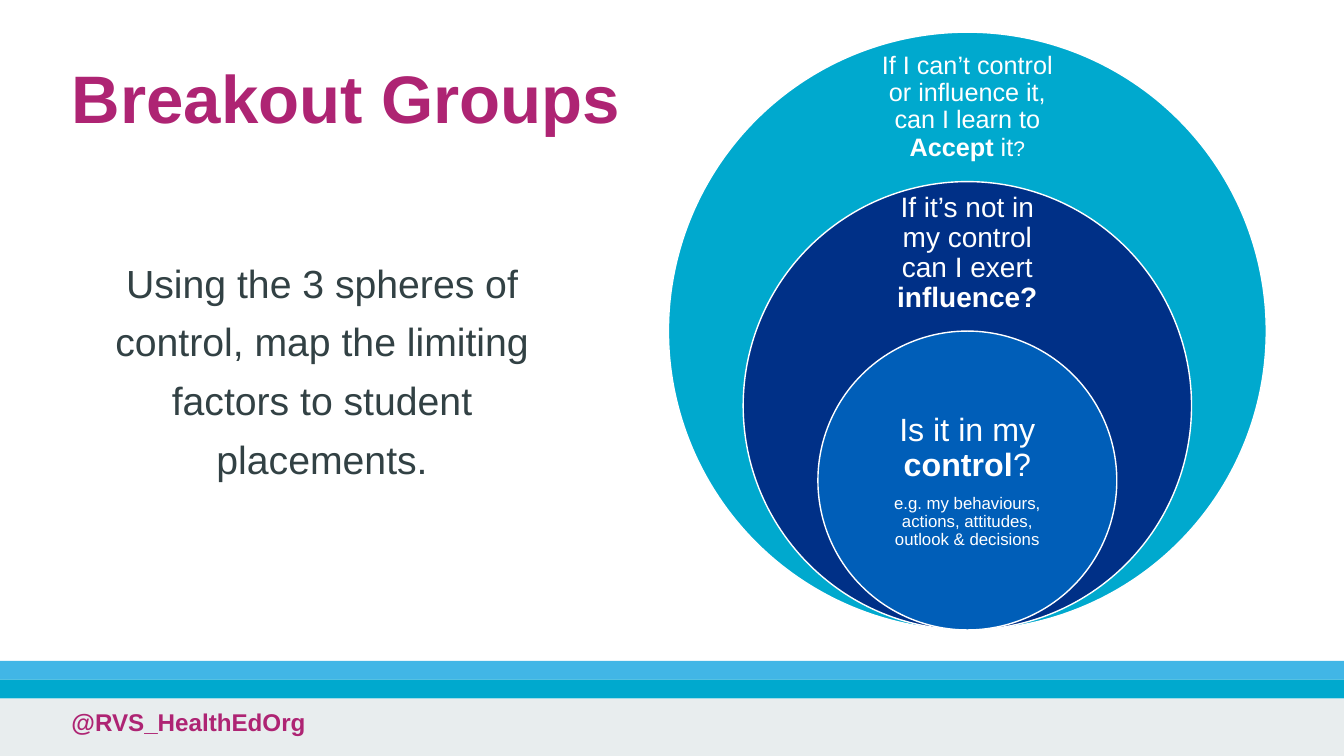
"""Build the Breakout Groups slide with three nested spheres of control."""
from pptx import Presentation
from pptx.dml.color import RGBColor
from pptx.enum.shapes import MSO_SHAPE as Shape
from pptx.enum.text import MSO_ANCHOR as Anchor, MSO_AUTO_SIZE as AutoSize, PP_ALIGN as Align
from pptx.oxml.ns import qn
from pptx.util import Pt
from lxml.etree import SubElement

WIDTH, HEIGHT = 960, 540
COLORS = {"magenta": "AE2473", "slate": "324144", "white": "FFFFFF", "mist": "E8EDEE",
          "sky": "41B6E6", "aqua": "00A9CE", "navy": "003087", "blue": "005EB8"}
TITLE = "Breakout Groups"
TASK = "Using the 3 spheres of control, map the limiting factors to student placements."
HANDLE = "@RVS_HealthEdOrg"
BANDS = [("mist", 499, 41), ("sky", 472, 13.5), ("aqua", 485.5, 13.5)]

SPHERE_CENTER, SPHERE_BOTTOM, SPHERE_SIZE = 691, 450, 427
LABEL_WIDTH, LABEL_HEIGHT = 150, 110
SPHERES = [
    {"color": "aqua", "scale": 1, "middle": 76.5, "inset": 10, "paragraphs": [
        (18, [("If I can’t control or influence it, can I learn to ", False, None),
              ("Accept", True, None), (" it", False, None), ("?", False, 15)])]},
    {"color": "navy", "scale": 0.75, "middle": 181, "inset": 11.5, "paragraphs": [
        (20, [("If it’s not in my control can I exert ", False, None),
              ("influence?", True, None)])]},
    {"color": "blue", "scale": 0.5, "middle": 344, "inset": 13, "paragraphs": [
        (23, [("Is it in my ", False, None), ("control", True, None), ("?", False, None)]),
        (12, [("e.g. my behaviours, actions, attitudes, outlook & decisions", False, None)])]},
]


def rgb(name):
    """Return the named colour."""
    return RGBColor.from_string(COLORS[name])


def place(shape, left, top, width, height):
    """Move and size a placeholder."""
    shape.left, shape.top, shape.width, shape.height = map(Pt, (left, top, width, height))


def style(para, size, color, bold=None, align=Align.LEFT, spacing=1.0):
    """Format a whole paragraph."""
    font = para.font
    font.name, font.size, font.bold = "Arial", Pt(size), bold
    font.color.rgb = rgb(color)
    para.alignment, para.line_spacing = align, spacing
    para.space_before = Pt(0)


def add_filled(slide, kind, color, left, top, width, height, outlined=False):
    """Add a flat coloured shape."""
    shape = slide.shapes.add_shape(kind, Pt(left), Pt(top), Pt(width), Pt(height))
    shape.shadow.inherit = False
    shape.fill.solid()
    shape.fill.fore_color.rgb = rgb(color)
    if outlined:
        shape.line.color.rgb = rgb("white")
        shape.line.width = Pt(1)
    else:
        shape.line.fill.background()


def add_label(slide, sphere):
    """Add the centred text of one sphere."""
    box = slide.shapes.add_textbox(
        Pt(SPHERE_CENTER - LABEL_WIDTH / 2), Pt(sphere["middle"] - LABEL_HEIGHT / 2),
        Pt(LABEL_WIDTH), Pt(LABEL_HEIGHT))
    frame = box.text_frame
    frame.word_wrap = True
    frame.vertical_anchor = Anchor.MIDDLE
    frame.margin_left = frame.margin_right = Pt(sphere["inset"])
    frame.margin_top = frame.margin_bottom = Pt(0)
    for index, (size, runs) in enumerate(sphere["paragraphs"]):
        para = frame.add_paragraph() if index else frame.paragraphs[0]
        style(para, size, "white", align=Align.CENTER, spacing=0.9)
        para.space_after = Pt(size * 0.35)
        for text, bold, own_size in runs:
            span = para.add_run()
            span.text = text
            span.font.bold = bold
            if own_size:
                span.font.size = Pt(own_size)


def main():
    """Assemble and save the deck."""
    deck = Presentation()
    deck.slide_width, deck.slide_height = Pt(WIDTH), Pt(HEIGHT)
    slide = deck.slides.add_slide(deck.slide_layouts[1])

    for color, top, height in BANDS:
        add_filled(slide, Shape.RECTANGLE, color, 0, top, WIDTH, height)
    handle = slide.shapes.add_textbox(Pt(44), Pt(502), Pt(560), Pt(38))
    handle.text_frame.word_wrap = True
    handle.text_frame.text = HANDLE
    style(handle.text_frame.paragraphs[0], 17.3, "magenta", bold=True)

    title, body = slide.shapes.title, slide.placeholders[1]
    place(title, 44, 21, 828, 104)
    place(body, 53, 127.5, 354, 337)
    for holder, text in ((title, TITLE), (body, TASK)):
        holder.text_frame.text = text
        holder.text_frame.auto_size = AutoSize.NONE
    title.text_frame.vertical_anchor = Anchor.MIDDLE
    style(title.text_frame.paragraphs[0], 48, "magenta", bold=True, spacing=0.9)
    body.text_frame.margin_top = Pt(49)
    task = body.text_frame.paragraphs[0]
    style(task, 28, "slate", align=Align.CENTER, spacing=1.25)
    properties = task._p.get_or_add_pPr()
    properties.set("marL", "0")
    properties.set("indent", "0")
    properties.insert_element_before(SubElement(properties, qn("a:buNone")), "a:defRPr")

    for sphere in SPHERES:
        size = SPHERE_SIZE * sphere["scale"]
        add_filled(slide, Shape.OVAL, sphere["color"], SPHERE_CENTER - size / 2,
                   SPHERE_BOTTOM - size, size, size, outlined=True)
        add_label(slide, sphere)
    deck.save("out.pptx")


if __name__ == "__main__":
    main()
